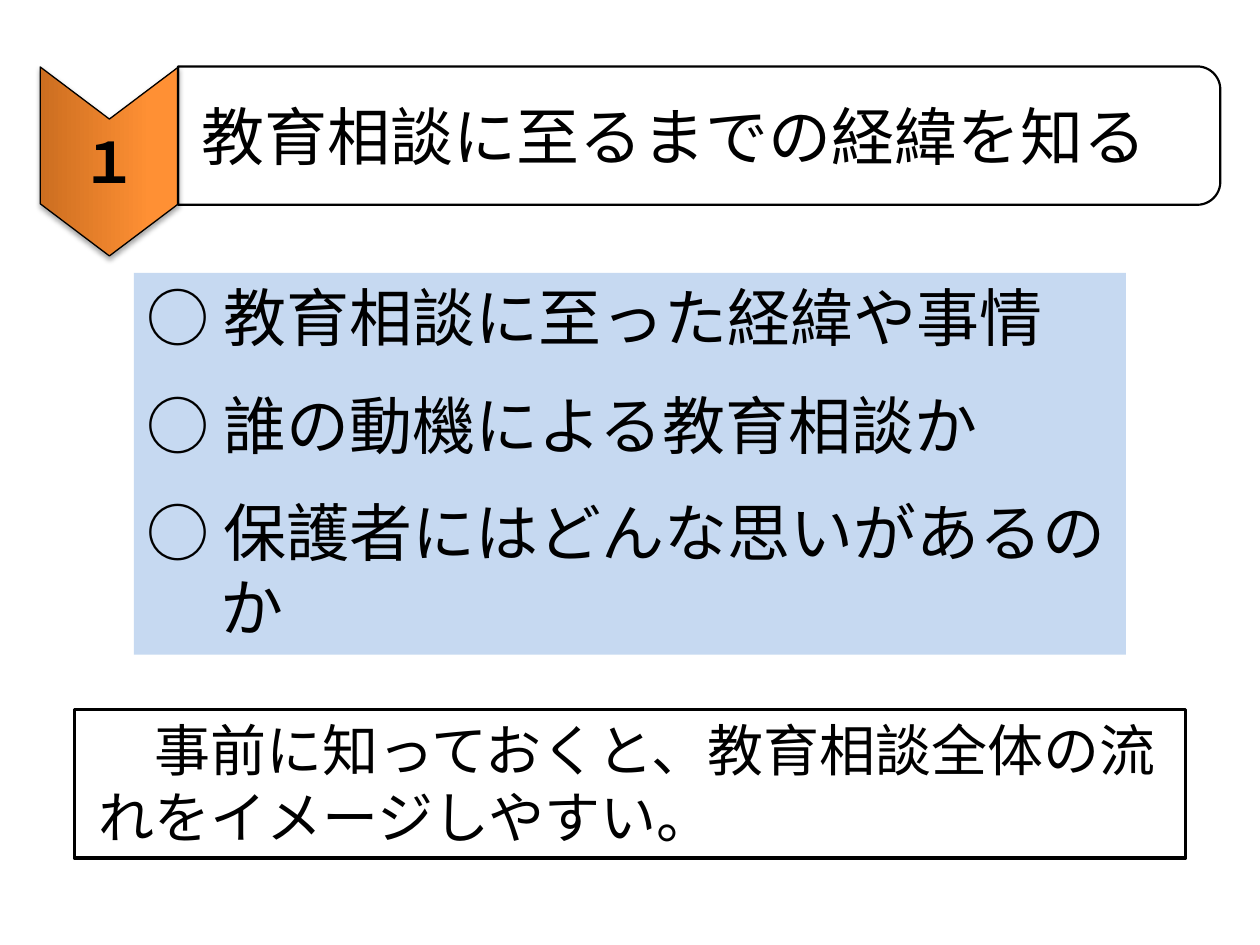
from lxml.etree import SubElement as Sub
from pptx import Presentation
from pptx.dml.color import RGBColor
from pptx.enum.shapes import MSO_SHAPE as Kind
from pptx.enum.text import MSO_ANCHOR as Anchor, PP_ALIGN as Align
from pptx.oxml.ns import qn
from pptx.util import Cm, Pt

BLACK = RGBColor(0, 0, 0)
WHITE = RGBColor(255, 255, 255)
BLUE = RGBColor(0xC6, 0xD9, 0xF1)
RUST = RGBColor(0xCC, 0x6E, 0x20)
ORANGE = RGBColor(0xFF, 0x90, 0x34)
FONT = "Noto Sans CJK JP"

TITLE = "教育相談に至るまでの経緯を知る"
POINTS = [
    "○ 教育相談に至った経緯や事情",
    "○ 誰の動機による教育相談か",
    "○ 保護者にはどんな思いがあるのか",
]
NOTE = " 事前に知っておくと、教育相談全体の流れをイメージしやすい。".replace(" ", "　")


def write(frame, lines, size, bold=False, align=Align.LEFT, anchor=Anchor.TOP,
          left=0, first=0, gap=0):
    frame.text = "\n".join(lines)
    frame.word_wrap = True
    frame.vertical_anchor = anchor
    for i, para in enumerate(frame.paragraphs):
        para.alignment = align
        para.space_before = Pt(gap if i else 0)
        props = para._p.get_or_add_pPr()
        props.set("marL", str(Cm(left)))
        props.set("indent", str(Cm(first)))
        for run in para.runs:
            font = run.font
            font.name, font.size, font.bold = FONT, Pt(size), bold
            font.color.rgb = BLACK
            Sub(run._r.get_or_add_rPr(), qn("a:ea"), typeface=FONT)


def add_box(slide, kind, x, y, w, h, fill=None, line=0):
    box = slide.shapes.add_shape(kind, Cm(x), Cm(y), Cm(w), Cm(h))
    box.shadow.inherit = False
    if fill is None:
        box.fill.background()
    else:
        box.fill.solid()
        box.fill.fore_color.rgb = fill
    if line:
        box.line.color.rgb = BLACK
        box.line.width = Pt(line)
    else:
        box.line.fill.background()
    return box


def add_badge(slide, text):
    badge = add_box(slide, Kind.CHEVRON, 0.3, 1.86, 3.81, 2.79, ORANGE, 0.75)
    badge.rotation = 90
    badge.adjustments[0] = 0.377
    badge.fill.gradient()
    badge.fill.gradient_angle = 90
    for stop, tone, place in zip(badge.fill.gradient_stops, (RUST, ORANGE), (0, 0.8)):
        stop.color.rgb = tone
        stop.position = place
    list_ = badge._element.spPr.find(qn("a:effectLst"))
    shade = Sub(list_, qn("a:outerShdw"), blurRad=str(Pt(3.1)), dist=str(Pt(1.8)),
                dir="5400000", rotWithShape="0")
    tint = Sub(shade, qn("a:srgbClr"), val=str(BLACK))
    Sub(tint, qn("a:alpha"), val="35000")
    frame = badge.text_frame
    write(frame, [text], 32, True, Align.CENTER, Anchor.MIDDLE)
    frame._txBody.bodyPr.set("vert", "vert270")


def add_title(slide):
    bar = add_box(slide, Kind.ROUND_2_SAME_RECTANGLE, 12.7, -7.77, 2.79, 21.01, line=1.25)
    bar.rotation = 90
    title = slide.shapes.title
    title.left, title.top, title.width, title.height = Cm(3.81), Cm(1.83), Cm(20.8), Cm(1.8)
    write(title.text_frame, [TITLE], 36, anchor=Anchor.MIDDLE)


def main():
    deck = Presentation()
    deck.slide_width, deck.slide_height = Cm(25.4), Cm(19.05)
    slide = deck.slides.add_slide(deck.slide_layouts[5])
    list_box = add_box(slide, Kind.RECTANGLE, 2.7, 5.5, 20, 7.7, BLUE)
    write(list_box.text_frame, POINTS, 36, left=1.5, first=-1.5, gap=18)
    note = add_box(slide, Kind.RECTANGLE, 1.5, 14.3, 22.4, 3, WHITE, 2)
    write(note.text_frame, [NOTE], 32, left=0.23)
    add_badge(slide, "１")
    add_title(slide)
    deck.save("out.pptx")


if __name__ == "__main__":
    main()
